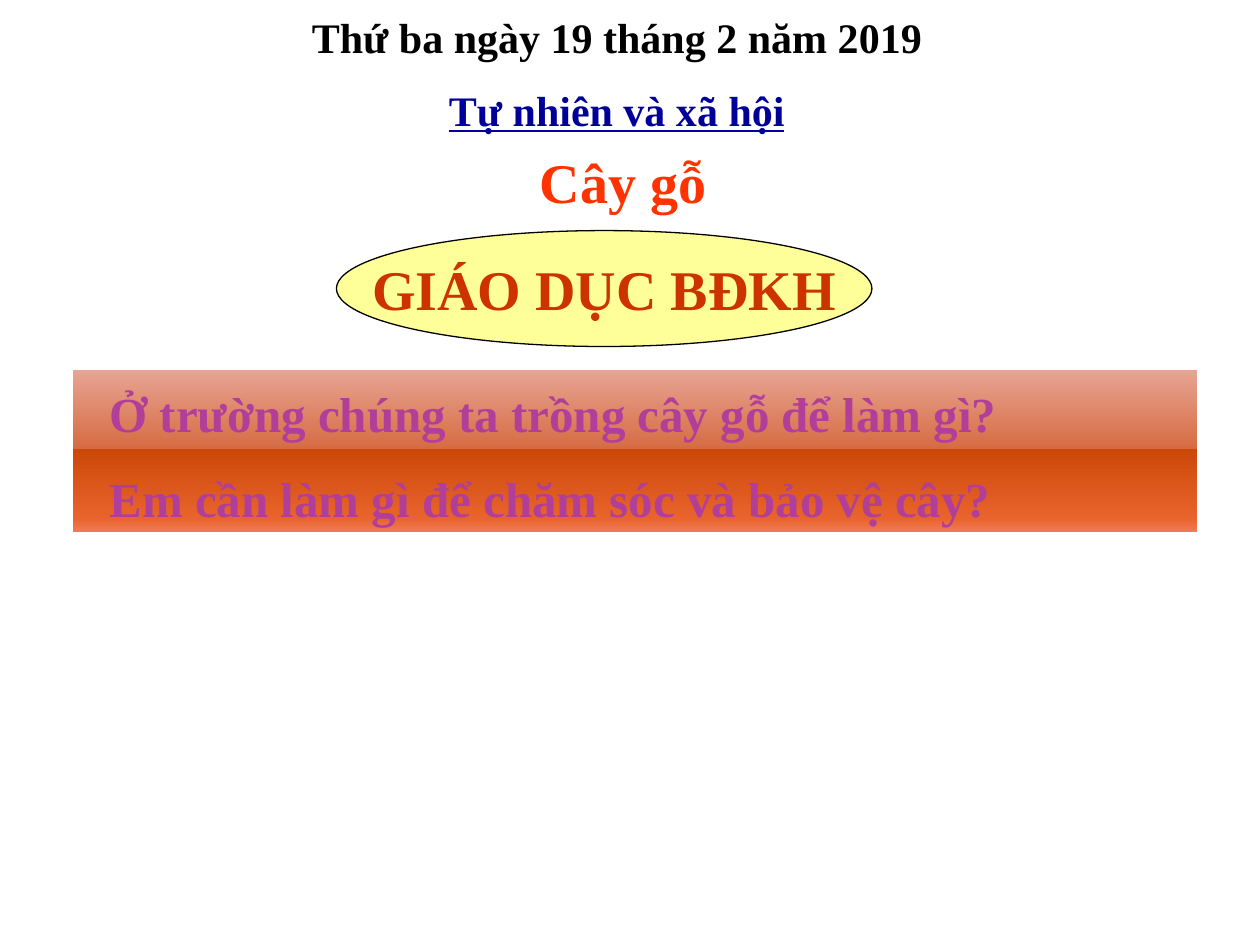
from lxml import etree
from pptx import Presentation
from pptx.dml.color import RGBColor
from pptx.enum.shapes import MSO_SHAPE as SHAPE
from pptx.enum.text import MSO_ANCHOR as ANCHOR, PP_ALIGN as ALIGN
from pptx.oxml import parse_xml
from pptx.oxml.ns import nsdecls, qn
from pptx.util import Inches, Pt

BLACK = RGBColor(0x00, 0x00, 0x00)
NAVY = RGBColor(0x00, 0x00, 0x99)
RED = RGBColor(0xFF, 0x33, 0x00)
BRICK = RGBColor(0xCC, 0x33, 0x00)
YELLOW = RGBColor(0xFF, 0xFF, 0x99)
PURPLE = RGBColor(0xB1, 0x3F, 0x9A)
PANEL_STOPS = [
    (0, RGBColor(0xE7, 0xA4, 0x93)),
    (49, RGBColor(0xD6, 0x6B, 0x42)),
    (49, RGBColor(0xCC, 0x48, 0x09)),
    (92, RGBColor(0xE9, 0x64, 0x2C)),
    (100, RGBColor(0xF0, 0x7B, 0x55)),
]


def write_lines(tf, lines, size, align, gap=0):
    """Write (text, colour, underlined) lines, with a gap between them."""
    for i, (text, colour, underlined) in enumerate(lines):
        p = tf.paragraphs[0] if i == 0 else tf.add_paragraph()
        p.alignment = align
        if i:
            p.space_before = Pt(gap)
        r = p.add_run()
        r.text = text
        r.font.color.rgb = colour
        formats = {"name": "Times New Roman", "size": Pt(size),
                   "bold": True, "underline": underlined}
        for name, value in formats.items():
            setattr(r.font, name, value)


def set_gradient(sp, stops):
    """Fill a shape from top to bottom with the given colour stops."""
    sp.fill.gradient()
    fill = sp._element.spPr.find(qn("a:gradFill"))
    for child in list(fill):
        fill.remove(child)
    gs_list = etree.SubElement(fill, qn("a:gsLst"))
    for percent, colour in stops:
        gs_list.append(parse_xml(
            f'<a:gs {nsdecls("a")} pos="{percent * 1000}">'
            f'<a:srgbClr val="{colour}"/></a:gs>'))
    etree.SubElement(fill, qn("a:lin"), ang="5400000", scaled="0")


def add_heading(s, box, lines, size, gap=0):
    tf = s.shapes.add_textbox(*map(Inches, box)).text_frame
    tf.word_wrap = True
    tf.margin_top = Inches(0.09)
    write_lines(tf, lines, size, ALIGN.CENTER, gap)


def add_questions(s, box, questions):
    sp = s.shapes.add_shape(SHAPE.RECTANGLE, *map(Inches, box))
    sp.shadow.inherit = False
    sp.line.fill.background()
    set_gradient(sp, PANEL_STOPS)
    tf = sp.text_frame
    formats = {"word_wrap": True, "vertical_anchor": ANCHOR.TOP,
               "margin_left": Inches(0.29), "margin_top": Inches(0.1)}
    for name, value in formats.items():
        setattr(tf, name, value)
    write_lines(tf, [(q, PURPLE, False) for q in questions], 28, ALIGN.LEFT, 15)


def add_topic(s, box, text):
    sp = s.shapes.add_shape(SHAPE.OVAL, *map(Inches, box))
    sp.shadow.inherit = False
    sp.fill.solid()
    sp.fill.fore_color.rgb = YELLOW
    sp.line.color.rgb = BLACK
    sp.line.width = Pt(0.75)
    tf = sp.text_frame
    tf.word_wrap = False
    tf.vertical_anchor = ANCHOR.MIDDLE
    write_lines(tf, [(text, BRICK, False)], 32, ALIGN.CENTER)


def main():
    prs = Presentation()
    prs.slide_width, prs.slide_height = Inches(10), Inches(7.5)
    s = prs.slides.add_slide(prs.slide_layouts[6])

    # Lesson title, below the date and subject
    add_heading(s, (3.83, 1.08, 2.23, 0.63), [("Cây gỗ", RED, False)], 32)
    add_heading(s, (0.67, 0, 8.45, 1.11), [
        ("Thứ ba ngày 19 tháng 2 năm 2019", BLACK, False),
        ("Tự nhiên và xã hội", NAVY, True),
    ], 24, gap=13)

    # Questions panel and topic badge
    add_questions(s, (0.58, 2.94, 8.92, 1.28), [
        "Ở trường chúng ta trồng cây gỗ để làm gì?",
        "Em cần làm gì để chăm sóc và bảo vệ cây?",
    ])
    add_topic(s, (2.67, 1.83, 4.25, 0.92), "GIÁO DỤC BĐKH")

    prs.save("out.pptx")


if __name__ == "__main__":
    main()
